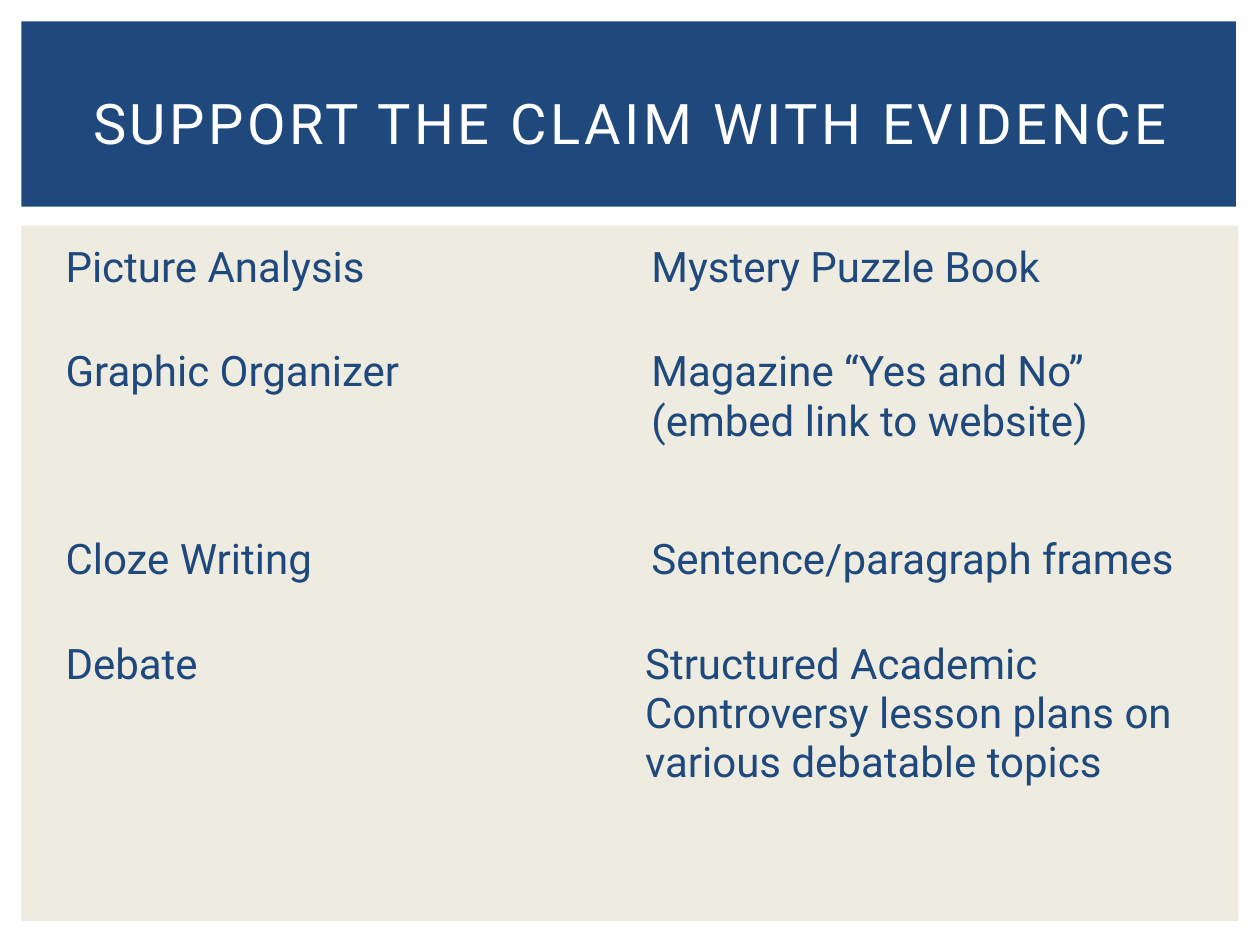
from pptx import Presentation
from pptx.dml.color import RGBColor
from pptx.enum.shapes import MSO_SHAPE
from pptx.enum.text import MSO_ANCHOR, PP_ALIGN
from pptx.util import Inches, Pt

RECTANGLE = MSO_SHAPE.RECTANGLE
MIDDLE = MSO_ANCHOR.MIDDLE
CENTER = PP_ALIGN.CENTER
TITLE_ONLY = 5
NO_STYLE_NO_GRID = "{2D5ABB26-0587-4C30-8999-92F81FD0307C}"
NAVY, CREAM, WHITE = "1F497D", "EEECE1", "FFFFFF"


def color(value):
    return RGBColor.from_string(value)


def write(para, text, size, text_color):
    span = para.add_run()
    span.text = text
    span.font.color.rgb = color(text_color)
    for name, value in {"name": "Roboto", "size": Pt(size), "bold": False}.items():
        setattr(span.font, name, value)
    return span


deck = Presentation()
deck.slide_width, deck.slide_height = Inches(10), Inches(7.5)
page = deck.slides.add_slide(deck.slide_layouts[TITLE_ONLY])

bands = [(1.79, 9.66, 5.52, CREAM), (0.17, 9.64, 1.47, NAVY)]
for top, width, height, fill in bands:
    band = page.shapes.add_shape(
        RECTANGLE, Inches(0.17), Inches(top), Inches(width), Inches(height))
    band.shadow.inherit = False
    band.fill.solid()
    band.fill.fore_color.rgb = color(fill)
    band.line.fill.background()

title = page.shapes.title
title_place = {"left": 0.42, "top": 0.39, "width": 9.17, "height": 1.15}
for name, value in title_place.items():
    setattr(title, name, Inches(value))
page.shapes._spTree.append(title._element)
title.text_frame.word_wrap = True
title.text_frame.vertical_anchor = MIDDLE
para = title.text_frame.paragraphs[0]
para.alignment = CENTER
span = write(para, "SUPPORT THE CLAIM WITH EVIDENCE", 32, WHITE)
span.font._element.set("spc", "200")

activities = [
    (0.83, "Picture Analysis", ["Mystery Puzzle Book"], 0.05),
    (1.49, "Graphic Organizer",
     ["Magazine “Yes and No”", "(embed link to website)"], 0.05),
    (0.83, "Cloze Writing", ["Sentence/paragraph frames"], 0.05),
    (2.15, "Debate",
     ["Structured Academic Controversy lesson plans on various debatable topics"], 0),
]
frame = page.shapes.add_table(
    len(activities), 2, Inches(0.42), Inches(1.88), Inches(9.2), Inches(5.3))
table = frame.table
table.first_row = table.horz_banding = False
table._tbl.tblPr.find("{*}tableStyleId").text = NO_STYLE_NO_GRID
for column in table.columns:
    column.width = Inches(4.6)

for row, (height, activity, details, indent) in enumerate(activities):
    table.rows[row].height = Inches(height)
    for column, (lines, margin) in enumerate([([activity], 0), (details, indent)]):
        cell = table.cell(row, column)
        cell.fill.background()
        for index, line in enumerate(lines):
            text = cell.text_frame
            para = text.add_paragraph() if index else text.paragraphs[0]
            para._p.get_or_add_pPr().set("marL", str(Inches(margin)))
            write(para, line, 24, NAVY)

deck.save("out.pptx")
